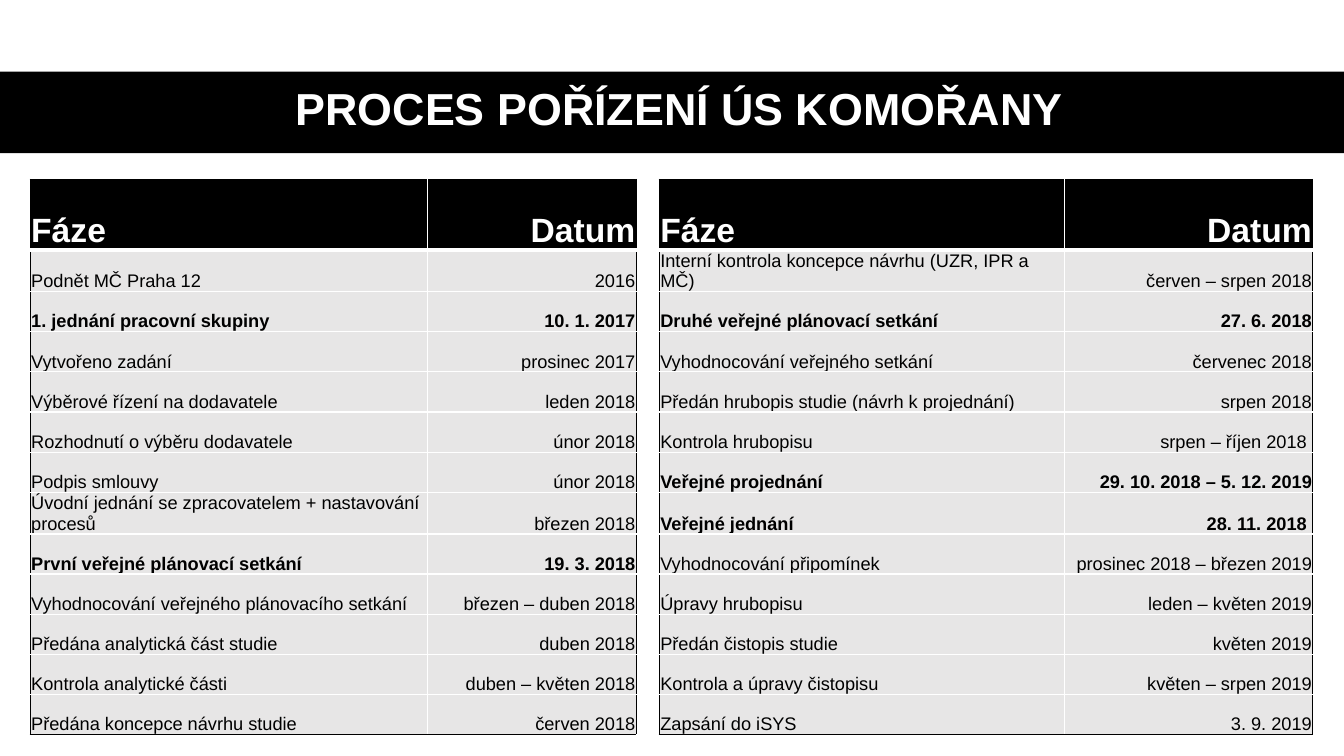
from lxml import etree
from pptx import Presentation
from pptx import util as u
from pptx.dml.color import RGBColor
from pptx.enum import shapes, text
from pptx.oxml import ns

BLACK = RGBColor(0, 0, 0)
WHITE = RGBColor(255, 255, 255)
GREY = RGBColor(0xE7, 0xE6, 0xE6)
LEFT, RIGHT, CENTER = text.PP_ALIGN.LEFT, text.PP_ALIGN.RIGHT, text.PP_ALIGN.CENTER

HEADER = ("Fáze", "Datum")
# (phase, date, is milestone)
FIRST_HALF = [
    ("Podnět MČ Praha 12", "2016", False),
    ("1. jednání pracovní skupiny", "10. 1. 2017", True),
    ("Vytvořeno zadání", "prosinec 2017", False),
    ("Výběrové řízení na dodavatele", "leden 2018", False),
    ("Rozhodnutí o výběru dodavatele", "únor 2018", False),
    ("Podpis smlouvy", "únor 2018", False),
    ("Úvodní jednání se zpracovatelem + nastavování procesů", "březen 2018", False),
    ("První veřejné plánovací setkání", "19. 3. 2018", True),
    ("Vyhodnocování veřejného plánovacího setkání", "březen – duben 2018", False),
    ("Předána analytická část studie", "duben 2018", False),
    ("Kontrola analytické části", "duben – květen 2018", False),
    ("Předána koncepce návrhu studie", "červen 2018", False),
]
SECOND_HALF = [
    ("Interní kontrola koncepce návrhu (UZR, IPR a MČ)", "červen – srpen 2018", False),
    ("Druhé veřejné plánovací setkání", "27. 6. 2018", True),
    ("Vyhodnocování veřejného setkání", "červenec 2018", False),
    ("Předán hrubopis studie (návrh k projednání)", "srpen 2018", False),
    ("Kontrola hrubopisu", "srpen – říjen 2018 ", False),
    ("Veřejné projednání", "29. 10. 2018 – 5. 12. 2019", True),
    ("Veřejné jednání", "28. 11. 2018 ", True),
    ("Vyhodnocování připomínek", "prosinec 2018 – březen 2019", False),
    ("Úpravy hrubopisu", "leden – květen 2019", False),
    ("Předán čistopis studie", "květen 2019", False),
    ("Kontrola a úpravy čistopisu", "květen – srpen 2019", False),
    ("Zapsání do iSYS", "3. 9. 2019", False),
]
HALVES = ((0, FIRST_HALF), (3, SECOND_HALF))
GAP_COL = 2
COL_WIDTHS = (3.94, 2.07, 0.23, 4.02, 2.46)
TABLE_HEIGHT, HEADER_HEIGHT = 5.48, 0.7


class SlideBuilder:
    font = "Arial"

    def __init__(self, prs):
        self.s = prs.slides.add_slide(prs.slide_layouts[5])

    def add_words(self, tf, words, size, color, bold, align):
        p = tf.paragraphs[0]
        p.alignment = align
        r = p.add_run()
        r.text = words
        r.font.name, r.font.size, r.font.bold = self.font, u.Pt(size), bold
        r.font.color.rgb = color
        return p

    def bar(self, x, y, w, h, color):
        sp = self.s.shapes.add_shape(shapes.MSO_SHAPE.RECTANGLE, *map(u.Inches, (x, y, w, h)))
        sp.shadow.inherit = False
        sp.fill.solid()
        sp.fill.fore_color.rgb = color
        sp.line.fill.background()

    def title(self, words, x, y, w, h):
        sp = self.s.shapes.title
        sp.left, sp.top, sp.width, sp.height = map(u.Inches, (x, y, w, h))
        tf = sp.text_frame
        tf.auto_size = text.MSO_AUTO_SIZE.NONE
        tf.vertical_anchor = text.MSO_ANCHOR.MIDDLE
        self.add_words(tf, words, 32, WHITE, True, CENTER).line_spacing = 0.9
        self.s.shapes._spTree.append(sp._element)  # in front of the bar

    def borders(self, cell, **edges):
        """Draw the edges L, R, T and B, each given as (colour, points)."""
        tc_pr = cell._tc.get_or_add_tcPr()
        for side in "LRTB":
            color, points = edges[side]
            ln = etree.SubElement(tc_pr, ns.qn(f"a:ln{side}"), w=str(u.Pt(points)))
            fill = etree.SubElement(ln, ns.qn("a:solidFill"))
            etree.SubElement(fill, ns.qn("a:srgbClr"), val=str(color))

    def cell(self, cell, fill, edges, margins=(0, 0, 0, 0)):
        self.borders(cell, **edges)
        cell.fill.solid()
        cell.fill.fore_color.rgb = fill
        (cell.margin_left, cell.margin_top,
         cell.margin_right, cell.margin_bottom) = map(u.Inches, margins)
        cell.vertical_anchor = text.MSO_ANCHOR.BOTTOM

    def schedule(self, x, y):
        n_rows = len(FIRST_HALF) + 1
        table = self.s.shapes.add_table(
            n_rows, len(COL_WIDTHS), u.Inches(x), u.Inches(y),
            u.Inches(sum(COL_WIDTHS)), u.Inches(TABLE_HEIGHT)).table
        table.first_row = table.horz_banding = False
        for col, width in zip(table.columns, COL_WIDTHS):
            col.width = u.Inches(width)
        for i, row in enumerate(table.rows):
            row.height = u.Inches(
                HEADER_HEIGHT if i == 0 else (TABLE_HEIGHT - HEADER_HEIGHT) / (n_rows - 1))

        black, white = (BLACK, 1), (WHITE, 1)
        for i in range(n_rows):
            head, last = i == 0, i == n_rows - 1
            self.cell(table.cell(i, GAP_COL), WHITE, dict(L=black, R=black, T=white, B=white))
            for first_col, entries in HALVES:
                *words, bold = (*HEADER, True) if head else entries[i - 1]
                for j, align in enumerate((LEFT, RIGHT)):
                    edges = dict(
                        L=white if j else black,
                        R=black if j else white,
                        T=black if head else (WHITE, 3) if i == 1 else white,
                        B=(WHITE, 3) if head else black if last else white)
                    c = table.cell(i, first_col + j)
                    self.cell(c, BLACK if head else GREY, edges, (0.01, 0.01, 0.01, 0))
                    self.add_words(c.text_frame, words[j], 24 if head else 13,
                                   WHITE if head else BLACK, bold, align)


def main():
    prs = Presentation()
    prs.slide_width, prs.slide_height = u.Inches(13.33), u.Inches(7.5)
    b = SlideBuilder(prs)
    b.bar(0, 0.71, 13.33, 0.81, BLACK)
    b.title("PROCES POŘÍZENÍ ÚS KOMOŘANY", 0.61, 0.7, 12.26, 0.81)
    b.schedule(0.3, 1.78)
    prs.save("out.pptx")


if __name__ == "__main__":
    main()
